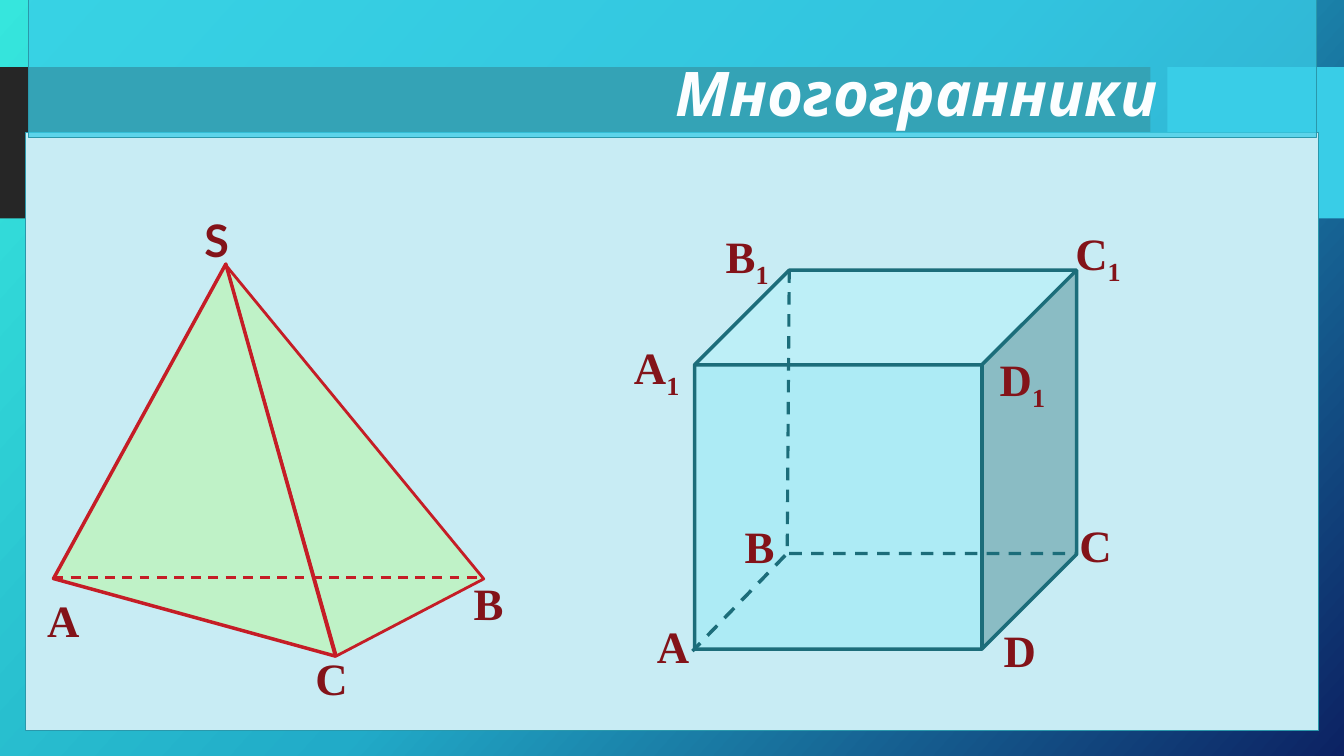
import copy
from dataclasses import dataclass

import pptx
import pptx.dml.color
import pptx.enum.dml
import pptx.enum.shapes
import pptx.enum.text
import pptx.oxml
import pptx.oxml.ns
import pptx.util

Pt = pptx.util.Pt
Shape = pptx.enum.shapes.MSO_SHAPE
Fit = pptx.enum.text.MSO_AUTO_SIZE
qn = pptx.oxml.ns.qn


@dataclass(frozen=True)
class Theme:
    backdrop: tuple = ((0, "36E6DD"), (0.5, "21ABC8"), (1, "0C2263"))
    dark: str = "262626"
    accent: str = "39CDE7"
    panel: str = "C8ECF4"
    border: str = "2A98AB"
    title: str = "FCFEFF"
    label: str = "831319"
    pyramid: str = "BFF2C7"
    pyramid_edge: str = "C51D26"
    cube: str = "ADEBF5"
    cube_edge: str = "1C6D7A"
    title_size: int = 44
    label_size: int = 32
    title_font: str = "Comic Neue"
    label_font: str = "Times New Roman"
    apex_font: str = "Lato"


THEME = Theme()


def rgb(color):
    return pptx.dml.color.RGBColor.from_string(color)


def apply(target, values):
    for name, value in values.items():
        setattr(target, name, value)


def style_line(line, color, width, dashed=False):
    line.color.rgb = rgb(color)
    line.width = Pt(width)
    if dashed:
        line.dash_style = pptx.enum.dml.MSO_LINE.DASH


def style_shape(shape, fill, edge, width, dashed=False):
    shape.shadow.inherit = False
    if fill:
        shape.fill.solid()
        shape.fill.fore_color.rgb = rgb(fill)
    else:
        shape.fill.background()
    if edge:
        style_line(shape.line, edge, width, dashed)
    else:
        shape.line.fill.background()


def paint_background(page):
    fill = page.background.fill
    fill.gradient()
    fill.gradient_angle = 318
    stops = page.element.find(".//" + qn("a:gsLst"))
    stops.append(copy.deepcopy(stops[0]))
    for stop, (position, color) in zip(fill.gradient_stops, THEME.backdrop):
        stop.position = position
        stop.color.rgb = rgb(color)


def add_solid(page, kind, bounds, fill, edge=None, width=1, rotation=0, opacity=100):
    shape = page.shapes.add_shape(kind, *map(Pt, bounds))
    style_shape(shape, fill, edge, width)
    shape.rotation = rotation
    if opacity < 100:
        color = shape.element.spPr.find(qn("a:solidFill"))[0]
        alpha = pptx.oxml.parse_xml(f'<a:alpha {pptx.oxml.ns.nsdecls("a")}/>')
        alpha.set("val", str(opacity * 1000))
        color.append(alpha)


def add_outline(page, points, edge, width, fill=None, dashed=False):
    corners = [(Pt(x), Pt(y)) for x, y in points]
    builder = page.shapes.build_freeform(*corners[0])
    builder.add_line_segments(corners[1:], close=fill is not None)
    style_shape(builder.convert_to_shape(), fill, edge, width, dashed)


def add_hidden_edge(page, start, end, edge, width):
    straight = pptx.enum.shapes.MSO_CONNECTOR.STRAIGHT
    connector = page.shapes.add_connector(straight, *map(Pt, start + end))
    style_line(connector.line, edge, width, dashed=True)
    connector.element.spPr.append(
        pptx.oxml.parse_xml(f'<a:effectLst {pptx.oxml.ns.nsdecls("a")}/>'))


def add_label(page, letter, left, top, width, index="", font=THEME.label_font):
    box = page.shapes.add_textbox(Pt(left), Pt(top), Pt(width), Pt(46))
    apply(box.text_frame, {"word_wrap": False, "auto_size": Fit.SHAPE_TO_FIT_TEXT})
    para = box.text_frame.paragraphs[0]
    for text, baseline in ((letter, 0), (index, -25000)):
        if not text:
            continue
        span = para.add_run()
        span.text = text
        apply(span.font, {"name": font, "size": Pt(THEME.label_size), "bold": True})
        span.font.color.rgb = rgb(THEME.label)
        if baseline:
            span._r.get_or_add_rPr().set("baseline", str(baseline))


def place_title(page, text):
    title = page.shapes.title
    apply(title, {"left": Pt(475.2), "top": Pt(15.1),
                  "width": Pt(373), "height": Pt(108)})
    title.element.getparent().append(title.element)
    frame = title.text_frame
    frame.text = text
    apply(frame, {"word_wrap": True, "auto_size": Fit.NONE,
                  "vertical_anchor": pptx.enum.text.MSO_ANCHOR.MIDDLE})
    para = frame.paragraphs[0]
    apply(para, {"alignment": pptx.enum.text.PP_ALIGN.LEFT, "line_spacing": 0.9})
    font = para.runs[0].font
    apply(font, {"name": THEME.title_font, "size": Pt(THEME.title_size),
                 "bold": True, "italic": True})
    font.color.rgb = rgb(THEME.title)


def draw_pyramid(page):
    edge = THEME.pyramid_edge
    add_solid(page, Shape.ISOSCELES_TRIANGLE, (167.8, 173.5, 118.8, 283.7),
              THEME.pyramid, edge, 2, rotation=332.4)
    add_label(page, "С", 218.2, 461.5, 37.4)
    add_label(page, "А", 26.6, 419.8, 37.4)
    add_label(page, "В", 331.2, 407.5, 36)
    add_label(page, "S", 139, 148.3, 31, font=THEME.apex_font)
    add_outline(page, [(239.6, 468.7), (161.3, 188.6), (38.2, 413.3)],
                edge, 2.5, THEME.pyramid)
    add_hidden_edge(page, (38.2, 412.6), (344.9, 412.6), edge, 1.75)


def draw_cube(page):
    edge = THEME.cube_edge
    add_solid(page, Shape.CUBE, (496.1, 193, 272.9, 270.7), THEME.cube, edge, 2.5)
    add_outline(page, [(563.8, 193), (562.3, 395.3), (768.2, 395.3)],
                edge, 2.25, dashed=True)
    add_hidden_edge(page, (560.9, 396.7), (494.6, 465.1), edge, 2.5)
    for letter, left, top, width in (("А", 462.2, 438.5, 37.4), ("В", 524.9, 367.2, 36),
                                     ("С", 763.9, 366.5, 37.4), ("D", 709.9, 441.4, 38.2)):
        add_label(page, letter, left, top, width)
    for letter, left, top, width in (("А", 445.7, 239, 49), ("В", 511.2, 159.8, 46.8),
                                     ("С", 761, 157.7, 49), ("D", 707, 247.7, 49)):
        add_label(page, letter, left, top, width, index="1")


def main():
    deck = pptx.Presentation()
    deck.slide_width, deck.slide_height = Pt(960), Pt(540)
    page = deck.slides.add_slide(deck.slide_layouts.get_by_name("Title Only"))
    paint_background(page)
    add_solid(page, Shape.RECTANGLE, (0, 48, 821.8, 108), THEME.dark)
    add_solid(page, Shape.RECTANGLE, (833.8, 48, 126.2, 108), THEME.accent)
    add_solid(page, Shape.RECTANGLE, (18.2, 94.8, 923.6, 427), THEME.panel, THEME.border)
    draw_pyramid(page)
    add_solid(page, Shape.RECTANGLE, (20.2, -5.5, 920, 103.7),
              THEME.accent, THEME.border, opacity=75)
    place_title(page, "Многогранники")
    draw_cube(page)
    deck.save("out.pptx")


if __name__ == "__main__":
    main()
